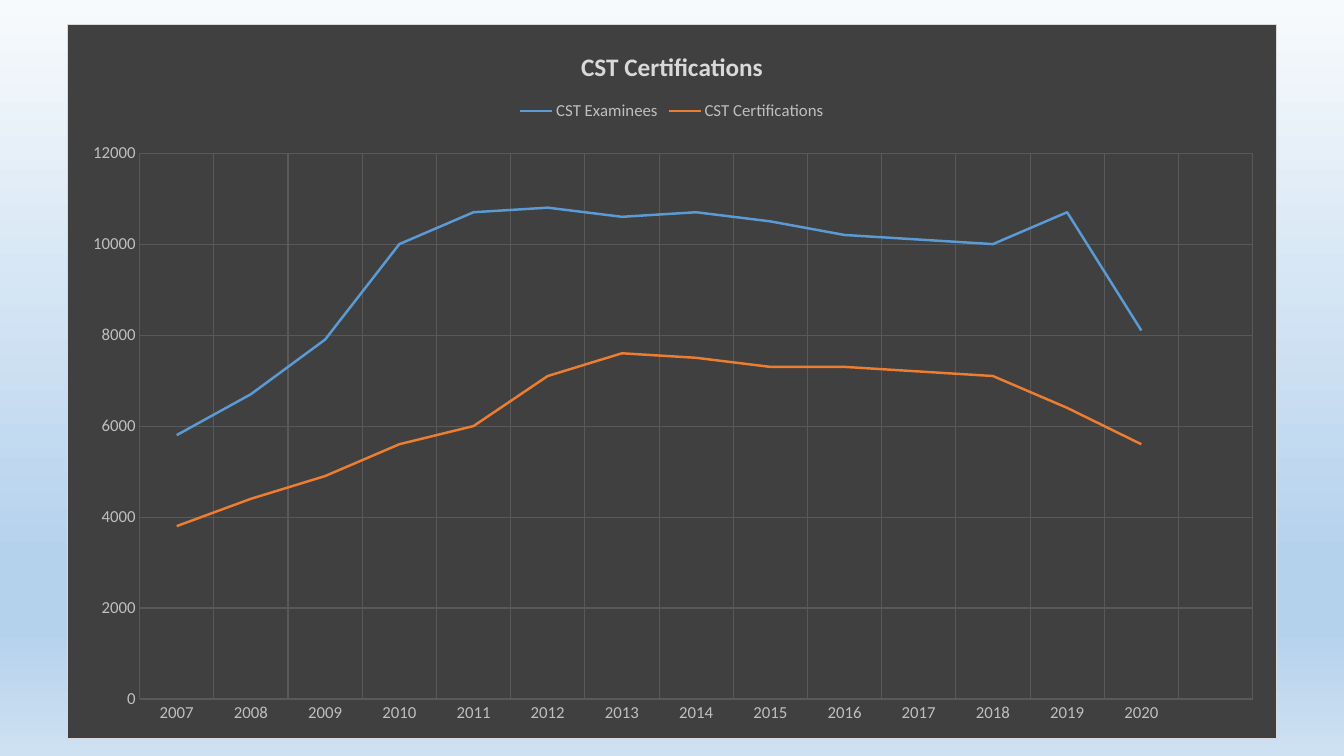
from dataclasses import dataclass

from lxml import etree
from pptx import Presentation
from pptx.chart.data import CategoryChartData
from pptx.dml.color import RGBColor
from pptx.enum.chart import XL_CHART_TYPE, XL_LEGEND_POSITION, XL_TICK_MARK
from pptx.oxml import parse_xml
from pptx.oxml.ns import nsdecls, qn
from pptx.util import Inches, Pt

TITLE = "CST Certifications"
YEARS = [str(year) for year in range(2007, 2021)] + [""]
COUNTS = {
    "CST Examinees": [5800, 6700, 7900, 10000, 10700, 10800, 10600, 10700,
                      10500, 10200, 10100, 10000, 10700, 8100, None],
    "CST Certifications": [3800, 4400, 4900, 5600, 6000, 7100, 7600, 7500,
                           7300, 7300, 7200, 7100, 6400, 5600, None],
}
CHART_BOX = (0.66, 0.24, 12.01, 7.09)
PLOT_BOX = {"x": 0.06, "y": 0.18, "w": 0.92, "h": 0.765}


@dataclass(frozen=True)
class Theme:
    typeface: str = "Calibri"
    title_size: int = 18
    label_size: int = 12
    title_color: str = "D9D9D9"
    label_color: str = "BFBFBF"
    panel: str = "404040"
    border: str = "D9D9D9"
    grid: str = "595959"
    hairline: float = 0.75
    trend_width: float = 1.75
    trends: tuple = ("5B9BD5", "ED7D31")
    sky: tuple = ((0, "F7FAFD"), (74, "B5D2EC"), (83, "B5D2EC"), (100, "CEE1F2"))


THEME = Theme()


def style_font(font, size, color, bold=False):
    font.name = THEME.typeface
    font.size = Pt(size)
    font.bold = bold
    font.color.rgb = RGBColor.from_string(color)


def write_text(frame, text, **style):
    frame.text = text
    style_font(frame.paragraphs[0].runs[0].font, **style)


def style_line(line, color, width):
    line.color.rgb = RGBColor.from_string(color)
    line.width = Pt(width)


def paint_sky(slide):
    fill = slide.background.fill
    fill.gradient()
    fill.gradient_angle = 270
    stops = slide.element.find(".//" + qn("a:gsLst"))
    for stop in list(stops):
        stops.remove(stop)
    for percent, color in THEME.sky:
        stop = etree.SubElement(stops, qn("a:gs"), pos=str(percent * 1000))
        etree.SubElement(stop, qn("a:srgbClr"), val=color)


def paint_panel(chart):
    panel = parse_xml(
        f'<c:spPr {nsdecls("c", "a")}>'
        f'<a:solidFill><a:srgbClr val="{THEME.panel}"/></a:solidFill>'
        f'<a:ln w="{Pt(THEME.hairline)}"><a:solidFill>'
        f'<a:srgbClr val="{THEME.border}"/></a:solidFill></a:ln></c:spPr>'
    )
    chart.element.find(qn("c:chart")).addnext(panel)


def place_plot(chart):
    plot_area = chart.element.find(".//" + qn("c:plotArea"))
    for old in plot_area.findall(qn("c:layout")):
        plot_area.remove(old)
    layout = etree.Element(qn("c:layout"))
    manual = etree.SubElement(layout, qn("c:manualLayout"))
    settings = {"layoutTarget": "inner", "xMode": "edge", "yMode": "edge", **PLOT_BOX}
    for tag, value in settings.items():
        etree.SubElement(manual, qn(f"c:{tag}"), val=str(value))
    plot_area.insert(0, layout)


def style_axis(axis, labels):
    axis.major_tick_mark = axis.minor_tick_mark = XL_TICK_MARK.NONE
    axis.has_major_gridlines = True
    style_line(axis.major_gridlines.format.line, THEME.grid, THEME.hairline)
    axis.format.line.fill.background()
    style_font(axis.tick_labels.font, **labels)


def add_certification_chart(slide):
    data = CategoryChartData()
    data.categories = YEARS
    for name, counts in COUNTS.items():
        data.add_series(name, counts)
    box = [Inches(length) for length in CHART_BOX]
    chart = slide.shapes.add_chart(XL_CHART_TYPE.LINE, *box, data).chart
    labels = {"size": THEME.label_size, "color": THEME.label_color}
    style_font(chart.font, **labels)
    paint_panel(chart)
    place_plot(chart)

    chart.has_title = True
    write_text(chart.chart_title.text_frame, TITLE,
               size=THEME.title_size, color=THEME.title_color, bold=True)
    chart.chart_title.include_in_layout = False
    chart.has_legend = True
    chart.legend.position = XL_LEGEND_POSITION.TOP
    chart.legend.include_in_layout = False
    style_font(chart.legend.font, **labels)

    for axis in (chart.category_axis, chart.value_axis):
        style_axis(axis, labels)
    chart.value_axis.minimum_scale = 0
    chart.value_axis.maximum_scale = 12000
    chart.value_axis.major_unit = 2000
    chart.value_axis.tick_labels.number_format = "General"
    chart.value_axis.tick_labels.number_format_is_linked = False

    chart.plots[0].vary_by_categories = False
    for trend, color in zip(chart.plots[0].series, THEME.trends):
        trend.smooth = False
        style_line(trend.format.line, color, THEME.trend_width)


def main():
    deck = Presentation()
    deck.slide_width = Inches(13.33)
    deck.slide_height = Inches(7.5)
    slide = deck.slides.add_slide(deck.slide_layouts[6])
    paint_sky(slide)
    add_certification_chart(slide)
    deck.save("out.pptx")


if __name__ == "__main__":
    main()
